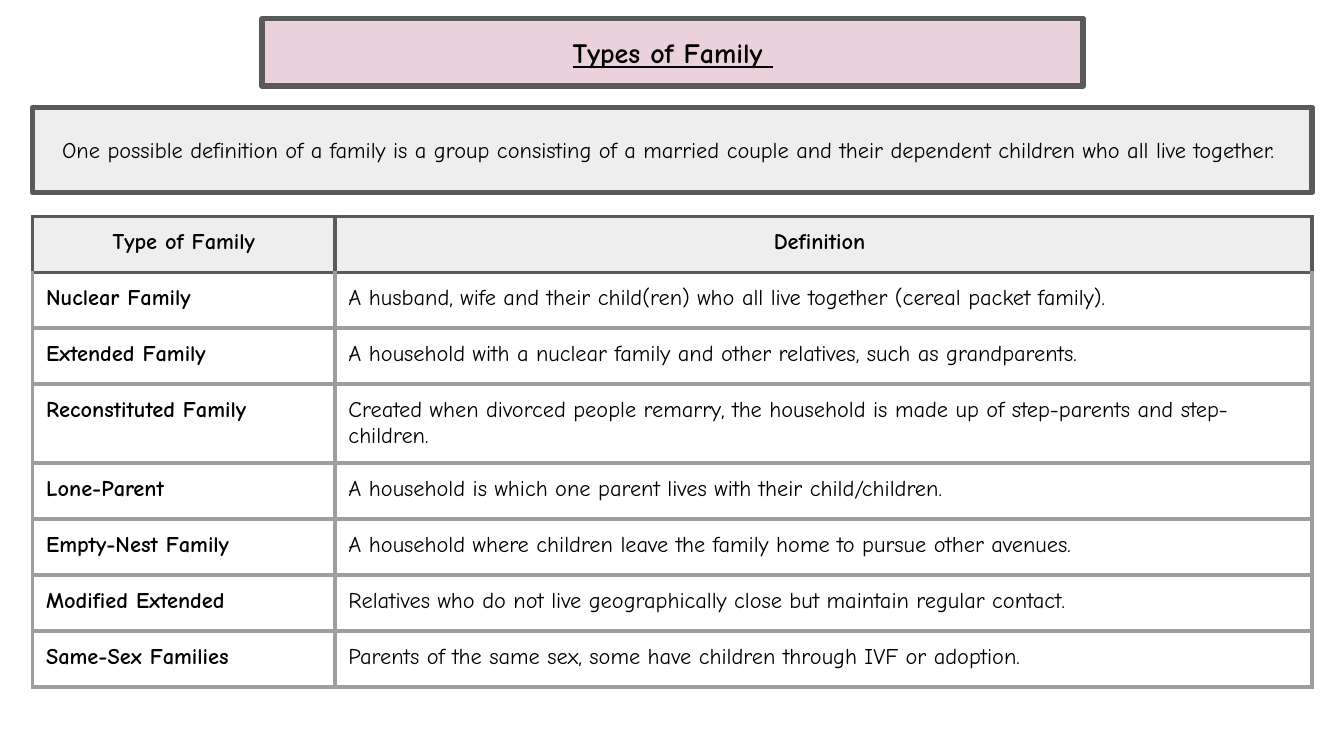
from lxml import etree
from pptx import Presentation
from pptx.dml.color import RGBColor
from pptx.enum.shapes import MSO_SHAPE
from pptx.enum.text import MSO_ANCHOR, PP_ALIGN
from pptx.oxml.ns import qn
from pptx.util import Pt

RECTANGLE = MSO_SHAPE.RECTANGLE
MIDDLE = MSO_ANCHOR.MIDDLE
CENTER, LEFT = PP_ALIGN.CENTER, PP_ALIGN.LEFT

COLORS = {
    "text": "000000",
    "title": "EAD1DC",
    "panel": "EEEEEE",
    "frame": "595959",
    "grid": "9E9E9E",
}
FONT = "Comic Neue"
INSET = Pt(7.2)
BORDER = Pt(2.25)
ROW_HEIGHT = Pt(30)
TYPE_WIDTH = Pt(162)

HEADER = ("Type of Family", "Definition ")
FAMILIES = [
    ("Nuclear Family", "A husband, wife and their child(ren) who all live together (cereal packet family)."),
    ("Extended Family", "A household with a nuclear family and other relatives, such as grandparents."),
    ("Reconstituted Family", "Created when divorced people remarry, the household is made up of step-parents and step-children."),
    ("Lone-Parent", "A household is which one parent lives with their child/children."),
    ("Empty-Nest Family", "A household where children leave the family home to pursue other avenues."),
    ("Modified Extended", "Relatives who do not live geographically close but maintain regular contact."),
    ("Same-Sex Families", "Parents of the same sex, some have children through IVF or adoption."),
]


def rgb(name):
    return RGBColor.from_string(COLORS[name])


def write(frame, text, size=12, bold=False, underline=False, align=LEFT):
    frame.text = text
    paragraph = frame.paragraphs[0]
    paragraph.alignment = align
    font = paragraph.runs[0].font
    font.name = FONT
    font.size = Pt(size)
    font.bold = bold
    font.underline = underline
    font.color.rgb = rgb("text")


def set_insets(holder):
    holder.margin_left = holder.margin_right = INSET
    holder.margin_top = holder.margin_bottom = INSET


def add_banner(slide, left, top, width, height, text, fill, **style):
    banner = slide.shapes.add_shape(RECTANGLE, left, top, width, height)
    banner.shadow.inherit = False
    banner.fill.solid()
    banner.fill.fore_color.rgb = rgb(fill)
    banner.line.color.rgb = rgb("frame")
    banner.line.width = Pt(3)
    frame = banner.text_frame
    frame.word_wrap = True
    frame.vertical_anchor = MIDDLE
    set_insets(frame)
    write(frame, text, align=CENTER, **style)


def set_borders(cell, side_color, top_color):
    properties = cell._tc.get_or_add_tcPr()
    for side in ("L", "R", "T", "B"):
        color = top_color if side == "T" else side_color
        border = etree.SubElement(properties, qn(f"a:ln{side}"), w=str(BORDER))
        fill = etree.SubElement(border, qn("a:solidFill"))
        etree.SubElement(fill, qn("a:srgbClr"), val=COLORS[color])


def add_family_table(slide, left, top, width):
    rows = [HEADER, *FAMILIES]
    table = slide.shapes.add_table(
        len(rows), len(HEADER), left, top, width, ROW_HEIGHT * len(rows)
    ).table
    table.first_row = False
    table.horz_banding = False
    table.columns[0].width = TYPE_WIDTH
    table.columns[1].width = width - TYPE_WIDTH
    for row, texts in enumerate(rows):
        table.rows[row].height = ROW_HEIGHT
        is_header = row == 0
        for column, text in enumerate(texts):
            cell = table.cell(row, column)
            set_insets(cell)
            write(
                cell.text_frame,
                text,
                bold=is_header or column == 0,
                align=CENTER if is_header else LEFT,
            )
            set_borders(
                cell,
                "frame" if is_header else "grid",
                "frame" if row <= 1 else "grid",
            )
            if is_header:
                cell.fill.solid()
                cell.fill.fore_color.rgb = rgb("panel")
            else:
                cell.fill.background()


def main():
    presentation = Presentation()
    presentation.slide_width = Pt(720)
    presentation.slide_height = Pt(405)
    slide = presentation.slides.add_slide(presentation.slide_layouts[6])
    left, width = Pt(17.5), Pt(685.5)
    add_banner(
        slide, Pt(140.4), Pt(10), Pt(440), Pt(36),
        "Types of Family ", "title", size=15, bold=True, underline=True,
    )
    add_banner(
        slide, left, Pt(57.6), width, Pt(45.5),
        "One possible definition of a family is a group consisting of a married couple "
        "and their dependent children who all live together. ",
        "panel",
    )
    add_family_table(slide, left, Pt(115.9), width)
    presentation.save("out.pptx")


if __name__ == "__main__":
    main()
